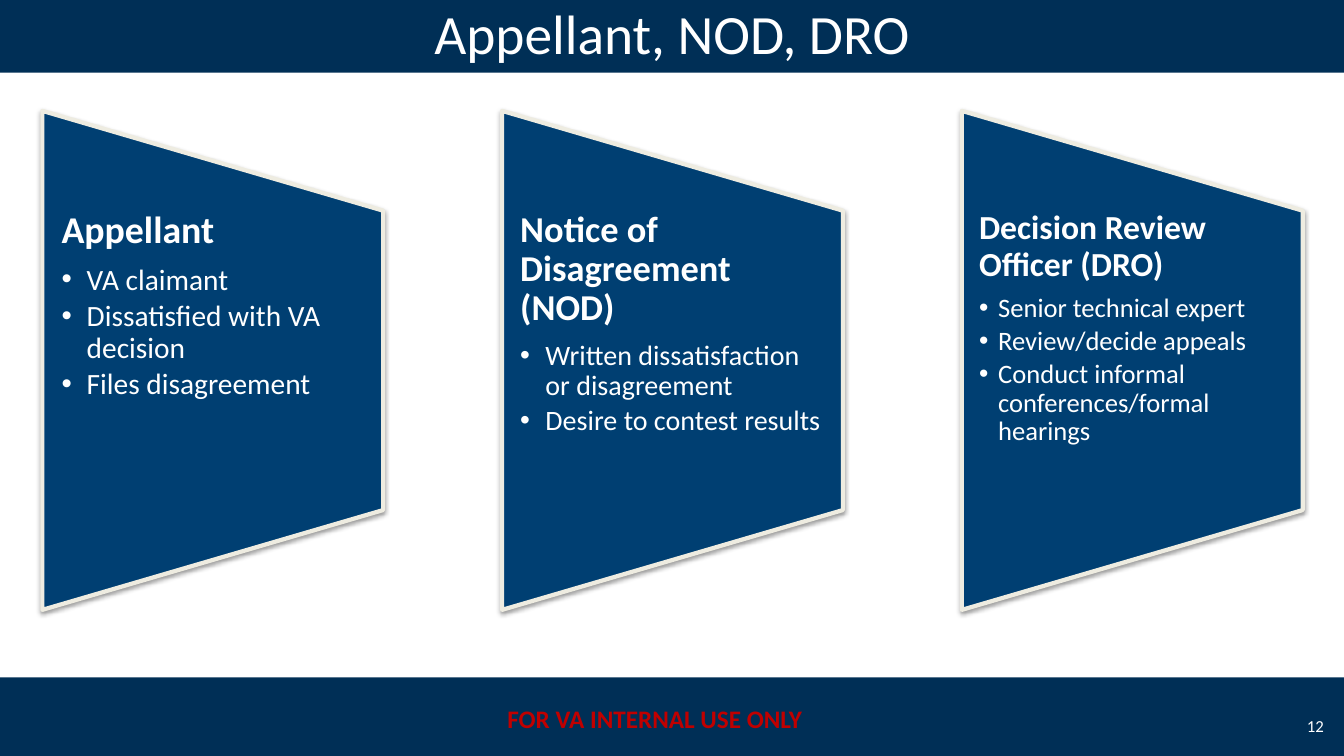
from dataclasses import dataclass

from lxml.etree import SubElement
from pptx import Presentation
from pptx.dml.color import RGBColor
from pptx.enum.shapes import MSO_SHAPE
from pptx.enum.text import MSO_ANCHOR, MSO_AUTO_SIZE, PP_ALIGN
from pptx.oxml.ns import qn
from pptx.util import Inches, Pt


@dataclass(frozen=True)
class Theme:
    font: str = "Calibri"
    bar: str = "002F56"
    panel: str = "003F72"
    edge: str = "EEECE1"
    text: str = "FFFFFF"
    warning: str = "C00000"
    shadow: str = "000000"
    title_size: float = 39.6
    footer_size: float = 18
    number_size: float = 12


@dataclass(frozen=True)
class Panel:
    heading: str
    bullets: tuple[str, ...]
    heading_size: float
    bullet_size: float
    inset: float
    indent: float = 0.25


THEME = Theme()
WIDTH, HEIGHT, BAR_HEIGHT = 13.33, 7.5, 0.8
LEFT, PITCH = 0.42, 4.56
PANEL_W, PANEL_H, PANEL_TOP = 3.38, 4.95, 1.1
TEXT_TOP, TEXT_H = 2.09, 2.97
PANELS = (
    Panel("Appellant",
          ("VA claimant", "Dissatisfied with VA decision", "Files disagreement"),
          27, 21, 0.19),
    Panel("Notice of Disagreement (NOD)",
          ("Written dissatisfaction or disagreement", "Desire to contest results"),
          26, 20, 0.18),
    Panel("Decision Review Officer (DRO)",
          ("Senior technical expert", "Review/decide appeals",
           "Conduct informal conferences/formal hearings"),
          24, 19, 0.17, 0.19),
)


def place(sp, left: float, top: float, width: float, height: float) -> None:
    sp.left, sp.top = Inches(left), Inches(top)
    sp.width, sp.height = Inches(width), Inches(height)


def set_frame(tf, anchor=MSO_ANCHOR.MIDDLE) -> None:
    tf.word_wrap = True
    tf.auto_size = MSO_AUTO_SIZE.NONE
    tf.vertical_anchor = anchor


def write(p, text: str, *, size: float, color: str = THEME.text,
          bold: bool = False, align=PP_ALIGN.LEFT, line: float = 1.0,
          after: float = 0, indent: float = 0) -> None:
    pPr = p._p.get_or_add_pPr()
    pPr.set("marL", str(Inches(indent)))
    pPr.set("indent", str(-Inches(indent)))
    if indent:
        p.level = 1
        SubElement(pPr, qn("a:buFont"), typeface="Arial")
        SubElement(pPr, qn("a:buChar"), char="•")
    else:
        SubElement(pPr, qn("a:buNone"))
    p.alignment = align
    p.line_spacing = line
    p.space_before, p.space_after = Pt(0), Pt(after)
    r = p.add_run()
    r.text = text
    r.font.name, r.font.size, r.font.bold = THEME.font, Pt(size), bold
    r.font.color.rgb = RGBColor.from_string(color)


def add_block(slide, kind, left: float, top: float, width: float,
              height: float, fill: str):
    sp = slide.shapes.add_shape(kind, Inches(left), Inches(top),
                                Inches(width), Inches(height))
    sp.shadow.inherit = False
    sp.fill.solid()
    sp.fill.fore_color.rgb = RGBColor.from_string(fill)
    sp.line.fill.background()
    return sp


def add_shadow(sp) -> None:
    effects = sp._element.spPr.find(qn("a:effectLst"))
    shadow = SubElement(effects, qn("a:outerShdw"), blurRad=str(Pt(3.1)),
                        dist=str(Pt(1.6)), dir="5400000", rotWithShape="0")
    color = SubElement(shadow, qn("a:srgbClr"), val=THEME.shadow)
    SubElement(color, qn("a:alpha"), val="38000")


def add_panel(slide, body, panel: Panel, left: float) -> None:
    sp = add_block(slide, MSO_SHAPE.FLOWCHART_MANUAL_OPERATION,
                   left + (PANEL_W - PANEL_H) / 2,
                   PANEL_TOP + (PANEL_H - PANEL_W) / 2,
                   PANEL_H, PANEL_W, THEME.panel)
    sp.rotation = 270
    sp.line.color.rgb = RGBColor.from_string(THEME.edge)
    sp.line.width = Pt(3)
    add_shadow(sp)

    place(body, left, TEXT_TOP, PANEL_W, TEXT_H)
    slide.shapes._spTree.append(body._element)
    tf = body.text_frame
    set_frame(tf, MSO_ANCHOR.TOP)
    tf.margin_left = tf.margin_right = Inches(panel.inset)
    tf.margin_top = tf.margin_bottom = 0
    write(tf.paragraphs[0], panel.heading, size=panel.heading_size, bold=True,
          line=0.9, after=0.35 * panel.heading_size)
    for text in panel.bullets:
        write(tf.add_paragraph(), text, size=panel.bullet_size, line=0.9,
              after=0.15 * panel.bullet_size, indent=panel.indent)


def main() -> None:
    prs = Presentation()
    prs.slide_width, prs.slide_height = Inches(WIDTH), Inches(HEIGHT)
    slide = prs.slides.add_slide(prs.slide_layouts.get_by_name("Comparison"))
    title, *bodies = slide.placeholders

    for top in (6.72, -0.08):
        add_block(slide, MSO_SHAPE.RECTANGLE, 0, top, WIDTH, BAR_HEIGHT, THEME.bar)

    footer = add_block(slide, MSO_SHAPE.RECTANGLE, 4.33, 6.93, 4.33, 0.4, THEME.bar)
    set_frame(footer.text_frame)
    write(footer.text_frame.paragraphs[0], "FOR VA INTERNAL USE ONLY",
          size=THEME.footer_size, color=THEME.warning, bold=True,
          align=PP_ALIGN.CENTER)

    place(title, 0, -0.08, WIDTH, BAR_HEIGHT)
    slide.shapes._spTree.append(title._element)
    set_frame(title.text_frame)
    write(title.text_frame.paragraphs[0], "Appellant, NOD, DRO",
          size=THEME.title_size, align=PP_ALIGN.CENTER)

    for i, (panel, body) in enumerate(zip(PANELS, bodies)):
        add_panel(slide, body, panel, LEFT + i * PITCH)
    for unused in bodies[len(PANELS):]:
        slide.shapes._spTree.remove(unused._element)

    number = slide.shapes.add_textbox(Inches(12.67), Inches(7), Inches(0.56), Inches(0.4))
    set_frame(number.text_frame)
    write(number.text_frame.paragraphs[0], "12", size=THEME.number_size,
          align=PP_ALIGN.RIGHT)

    prs.save("out.pptx")


if __name__ == "__main__":
    main()
